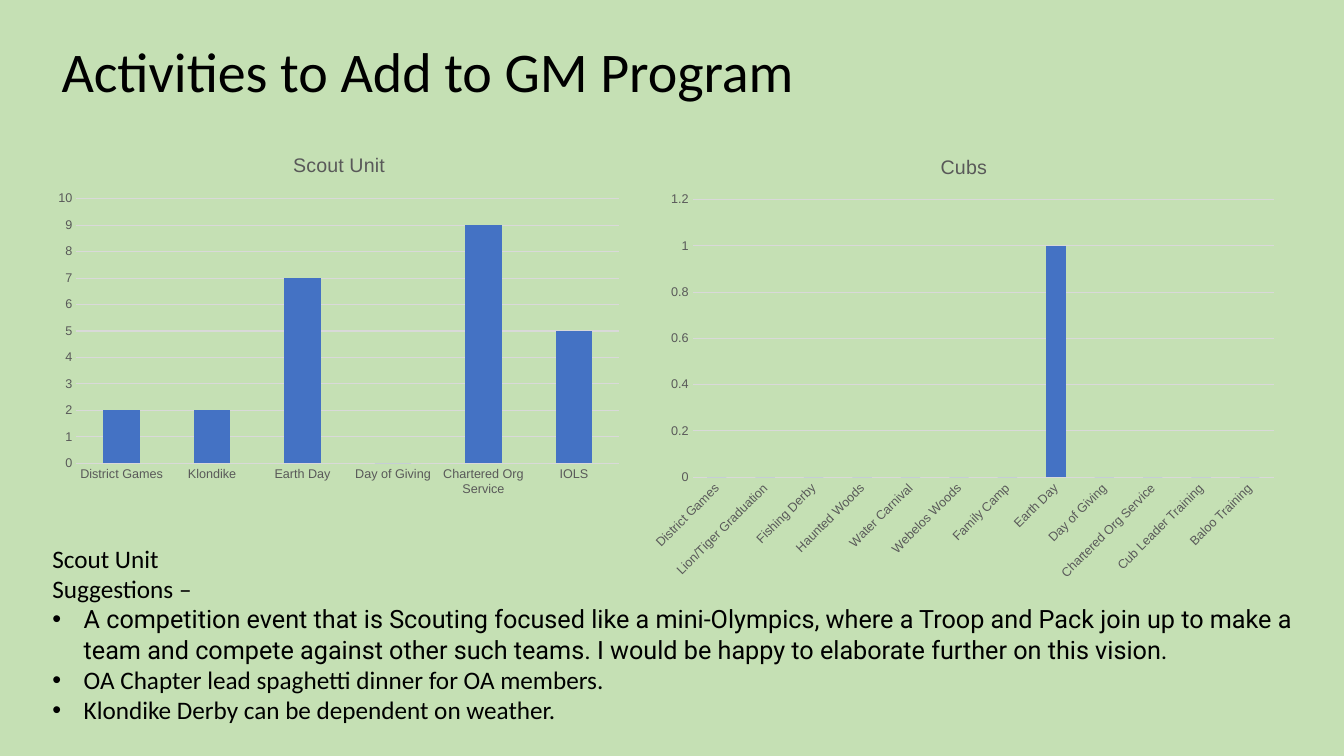
from dataclasses import dataclass

from lxml import etree
from pptx import Presentation
from pptx.chart.data import CategoryChartData
from pptx.dml.color import RGBColor
from pptx.enum.chart import XL_CHART_TYPE, XL_TICK_MARK
from pptx.enum.text import MSO_ANCHOR, PP_ALIGN
from pptx.oxml import parse_xml
from pptx.oxml.ns import nsdecls, qn
from pptx.util import Cm, Pt

CLUSTERED = XL_CHART_TYPE.COLUMN_CLUSTERED
STACKED = XL_CHART_TYPE.COLUMN_STACKED
NO_TICK = XL_TICK_MARK.NONE
LEFT = PP_ALIGN.LEFT
TOP, MIDDLE = MSO_ANCHOR.TOP, MSO_ANCHOR.MIDDLE


@dataclass(frozen=True)
class Theme:
    background: RGBColor = RGBColor(0xC5, 0xE0, 0xB4)
    ink: RGBColor = RGBColor(0, 0, 0)
    label: RGBColor = RGBColor(0x59, 0x59, 0x59)
    grid: RGBColor = RGBColor(0xD9, 0xD9, 0xD9)
    bar: RGBColor = RGBColor(0x44, 0x72, 0xC4)
    text_font: str = "Calibri"
    accent_font: str = "Roboto"
    chart_font: str = "Arial"
    title_size: Pt = Pt(40)
    body_size: Pt = Pt(18)
    chart_title_size: Pt = Pt(14)
    chart_size: Pt = Pt(10)
    axis_size: Pt = Pt(9)


THEME = Theme()

SUGGESTIONS = [
    ("Scout Unit", {}),
    ("Suggestions –", {}),
    ("A competition event that is Scouting focused like a mini-Olympics, where a Troop "
     "and Pack join up to make a team and compete against other such teams. I would be "
     "happy to elaborate further on this vision.",
     {"bulleted": True, "typeface": THEME.accent_font}),
    ("OA Chapter lead spaghetti dinner for OA members.", {"bulleted": True}),
    ("Klondike Derby can be dependent on weather.", {"bulleted": True}),
]
CUB_VOTES = {
    "District Games": 0, "Lion/Tiger Graduation": 0, "Fishing Derby": 0,
    "Haunted Woods": 0, "Water Carnival": 0, "Webelos Woods": 0,
    "Family Camp": 0, "Earth Day": 1, "Day of Giving": 0,
    "Chartered Org Service": 0, "Cub Leader Training": 0, "Baloo Training": 0,
}
SCOUT_VOTES = {
    "District Games": 2, "Klondike": 2, "Earth Day": 7,
    "Day of Giving": 0, "Chartered Org Service": 9, "IOLS": 5,
}


def style_font(font, size, color, typeface):
    font.size, font.name, font.bold = size, typeface, False
    font.color.rgb = color


def write_text(paragraph, text, *, size, typeface=THEME.text_font, color=THEME.ink,
               bulleted=False, spacing=1.0):
    """Fill one paragraph, with its bullet and format."""
    properties = paragraph._p.get_or_add_pPr()
    indent = Cm(0.79) if bulleted else 0
    properties.set("marL", str(indent))
    properties.set("indent", str(-indent))
    paragraph.alignment = LEFT
    paragraph.line_spacing = spacing
    paragraph.space_before = paragraph.space_after = Pt(0)
    if bulleted:
        bullet_font = etree.SubElement(properties, qn("a:buFont"))
        bullet_font.set("typeface", THEME.chart_font)
        etree.SubElement(properties, qn("a:buChar")).set("char", "•")
    else:
        etree.SubElement(properties, qn("a:buNone"))
    run = paragraph.add_run()
    run.text = text
    style_font(run.font, size, color, typeface)


def place_frame(placeholder, box, anchor):
    """Move a placeholder and return its text frame."""
    placeholder.left, placeholder.top, placeholder.width, placeholder.height = box
    frame = placeholder.text_frame
    frame.word_wrap = True
    frame.vertical_anchor = anchor
    frame.margin_left = frame.margin_right = Cm(0.13)
    frame.margin_top = frame.margin_bottom = Cm(0.13)
    return frame


def add_suggestions(placeholder, box):
    frame = place_frame(placeholder, box, TOP)
    for index, (text, options) in enumerate(SUGGESTIONS):
        paragraph = frame.add_paragraph() if index else frame.paragraphs[0]
        write_text(paragraph, text, size=THEME.body_size, **options)


def set_plot_area(chart, fractions):
    """Fix the inner plot area as x, y, w, h fractions of the chart."""
    plot_area = chart._chartSpace.chart.plotArea
    for old_layout in plot_area.findall(qn("c:layout")):
        plot_area.remove(old_layout)
    sizes = "".join(f'<c:{key} val="{value}"/>' for key, value in zip("xywh", fractions))
    plot_area.insert(0, parse_xml(
        f'<c:layout {nsdecls("c")}><c:manualLayout><c:layoutTarget val="inner"/>'
        f'<c:xMode val="edge"/><c:yMode val="edge"/>{sizes}</c:manualLayout></c:layout>'))


def add_votes_chart(slide, kind, title, votes, box, *, top_value, step, plot_area,
                    slanted=False):
    data = CategoryChartData()
    data.categories = list(votes)
    data.add_series("Series 1", list(votes.values()))
    chart = slide.shapes.add_chart(kind, *box, data).chart
    style_font(chart.font, THEME.chart_size, THEME.ink, THEME.chart_font)
    chart.has_legend = False
    chart.has_title = True
    title_paragraph = chart.chart_title.text_frame.paragraphs[0]
    title_paragraph.text = title
    style_font(title_paragraph.runs[0].font, THEME.chart_title_size, THEME.label,
               THEME.chart_font)
    chart.chart_title.include_in_layout = False

    # Axes and gridlines
    activities, counts = chart.category_axis, chart.value_axis
    for axis in (activities, counts):
        axis.major_tick_mark = axis.minor_tick_mark = NO_TICK
        axis.format.line.fill.background()
        style_font(axis.tick_labels.font, THEME.axis_size, THEME.label, THEME.chart_font)
    counts.minimum_scale, counts.maximum_scale = 0, top_value
    counts.major_unit = step
    counts.tick_labels.number_format = "General"
    counts.tick_labels.number_format_is_linked = False
    grid_line = counts.major_gridlines.format.line
    grid_line.color.rgb, grid_line.width = THEME.grid, Pt(0.75)
    if slanted:
        label_body = activities._element.find(f'{qn("c:txPr")}/{qn("a:bodyPr")}')
        label_body.set("rot", "-2700000")
        label_body.set("vert", "horz")

    # Bars
    bars = chart.plots[0]
    bars.vary_by_categories = False
    bars.gap_width = 150
    if kind == STACKED:
        bars.overlap = 100
    bar_fill = bars.series[0].format.fill
    bar_fill.solid()
    bar_fill.fore_color.rgb = THEME.bar
    set_plot_area(chart, plot_area)


def main():
    deck = Presentation()
    deck.slide_width, deck.slide_height = Cm(33.87), Cm(19.05)
    slide = deck.slides.add_slide(deck.slide_layouts[1])
    slide.background.fill.solid()
    slide.background.fill.fore_color.rgb = THEME.background

    # Title and suggestions
    heading = place_frame(slide.shapes.title,
                          (Cm(1.42), Cm(0.61), Cm(28.63), Cm(2.54)), MIDDLE)
    write_text(heading.paragraphs[0], "Activities to Add to GM Program",
               size=THEME.title_size, spacing=0.9)
    add_suggestions(slide.placeholders[1], (Cm(1.19), Cm(13.56), Cm(32.28), Cm(4.88)))

    # Votes by activity
    chart_top = Cm(3.43)
    add_votes_chart(slide, CLUSTERED, "Cubs", CUB_VOTES,
                    (Cm(16.15), chart_top, Cm(16.28), Cm(11.46)),
                    top_value=1.2, step=0.2, plot_area=(0.08, 0.14, 0.9, 0.61),
                    slanted=True)
    add_votes_chart(slide, STACKED, "Scout Unit", SCOUT_VOTES,
                    (Cm(1.19), chart_top, Cm(14.71), Cm(9.27)),
                    top_value=10, step=1, plot_area=(0.05, 0.17, 0.93, 0.72))

    deck.save("out.pptx")


if __name__ == "__main__":
    main()
